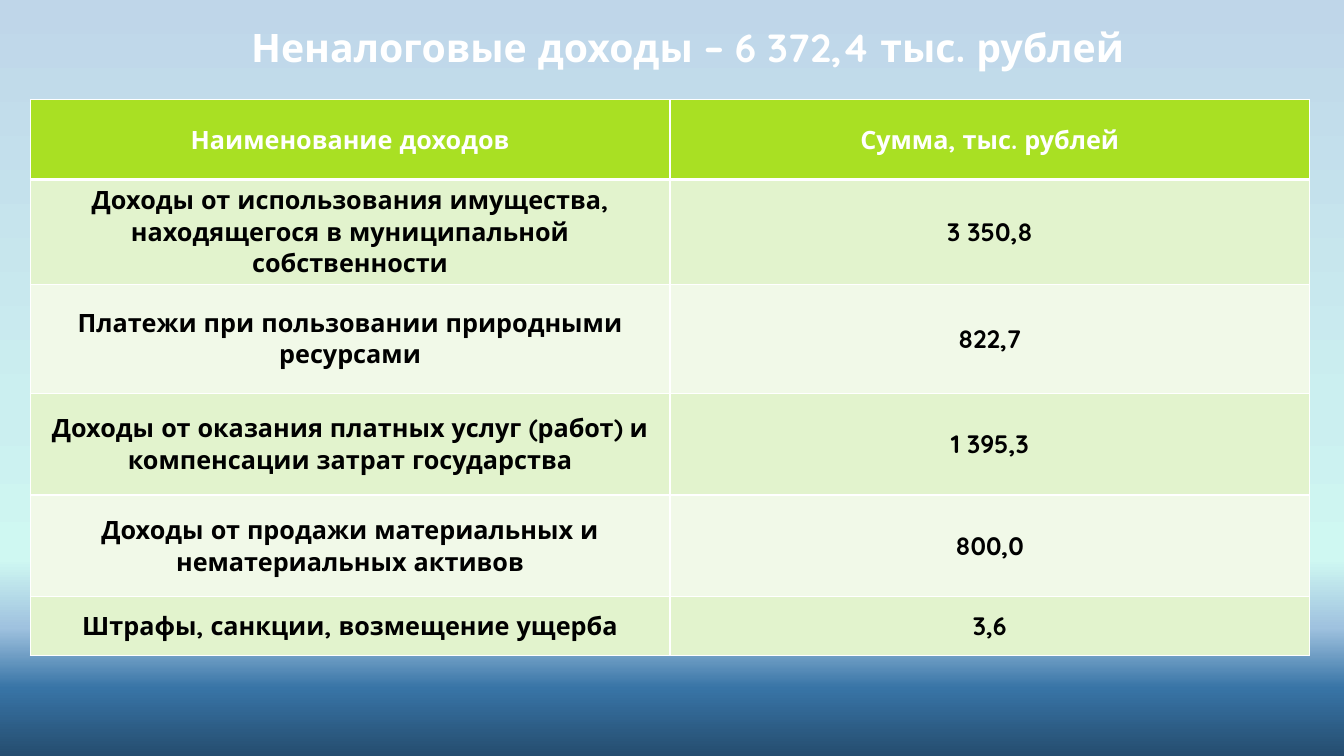
from dataclasses import dataclass

from lxml import etree
from pptx import Presentation
from pptx import util as u
from pptx.dml.color import RGBColor
from pptx.enum import text
from pptx.oxml.ns import qn


@dataclass(frozen=True)
class Theme:
    font: str = "Quicksand"
    title_size: int = 28
    cell_size: int = 18
    white: str = "FFFFFF"
    black: str = "000000"
    header: str = "A9E023"
    bands: tuple = ("E2F3CD", "F1F9E8")
    sky: tuple = ((0, "BFD6E9"), (54, "CBEFF0"), (74, "CFF8F2"),
                  (83, "9FC2DF"), (91, "3874A6"), (100, "254D6F"))


def write(tf, content, size, color, font, bold=True, align=text.PP_ALIGN.CENTER):
    p = tf.paragraphs[0]
    p.alignment = align
    r = p.add_run()
    r.text = content
    r.font.size = u.Pt(size)
    r.font.name = font
    r.font.bold = bold
    r.font.color.rgb = RGBColor.from_string(color)


def add_color(parent, color):
    etree.SubElement(parent, qn("a:srgbClr"), val=color)


def set_borders(cell, color, **widths):
    """Draw cell borders; widths are points by side (L, R, T, B, in that order)."""
    tc_pr = cell._tc.get_or_add_tcPr()
    for i, (side, width) in enumerate(widths.items()):
        ln = etree.Element(qn(f"a:ln{side}"), w=str(u.Pt(width)))
        add_color(etree.SubElement(ln, qn("a:solidFill")), color)
        tc_pr.insert(i, ln)


class SlideBuilder:
    def __init__(self, s, theme):
        self.s = s
        self.theme = theme

    def background(self):
        fill = self.s.background.fill
        fill.gradient()
        fill.gradient_angle = 270
        stops = self.s.element.find(".//" + qn("a:gsLst"))
        for stop in list(stops):
            stops.remove(stop)
        for percent, color in self.theme.sky:
            add_color(etree.SubElement(stops, qn("a:gs"), pos=str(percent * 1000)), color)

    def title(self, content, left, top, width, height):
        t = self.theme
        sp = self.s.shapes.add_textbox(*map(u.Inches, (left, top, width, height)))
        tf = sp.text_frame
        tf.word_wrap = True
        tf.auto_size = text.MSO_AUTO_SIZE.SHAPE_TO_FIT_TEXT
        write(tf, content, t.title_size, t.white, t.font)

    def table(self, rows, left, top, width, heights):
        t = self.theme
        box = map(u.Inches, (left, top, width, sum(heights)))
        table = self.s.shapes.add_table(len(rows), len(rows[0]), *box).table
        for i, (values, height) in enumerate(zip(rows, heights)):
            table.rows[i].height = u.Inches(height)
            fill = t.bands[(i - 1) % 2] if i else t.header
            for cell, value in zip(table.rows[i].cells, values):
                cell.vertical_anchor = text.MSO_ANCHOR.MIDDLE
                cell.fill.solid()
                cell.fill.fore_color.rgb = RGBColor.from_string(fill)
                set_borders(cell, t.white, L=1, R=1,
                            T=3 if i == 1 else 1, B=3 if i == 0 else 1)
                write(cell.text_frame, value, t.cell_size, t.black if i else t.white, t.font)


INCOME = [
    ("Наименование доходов", "Сумма, тыс. рублей"),
    ("Доходы от использования имущества, находящегося в муниципальной собственности", "3 350,8"),
    ("Платежи при пользовании природными ресурсами", "822,7"),
    ("Доходы от оказания платных услуг (работ) и компенсации затрат государства", "1 395,3"),
    ("Доходы от продажи материальных и нематериальных активов", "800,0"),
    ("Штрафы, санкции, возмещение ущерба", "3,6"),
]


def main():
    prs = Presentation()
    prs.slide_width, prs.slide_height = u.Inches(13.33), u.Inches(7.5)
    slide = SlideBuilder(prs.slides.add_slide(prs.slide_layouts[6]), Theme())
    slide.background()
    slide.table(INCOME, 0.3, 0.99, 12.69, [0.79, 1.01, 1.08, 1.01, 1.01, 0.58])
    slide.title("Неналоговые доходы – 6 372,4 тыс. рублей", 2.2, 0.18, 9.24, 0.57)
    prs.save("out.pptx")


if __name__ == "__main__":
    main()
